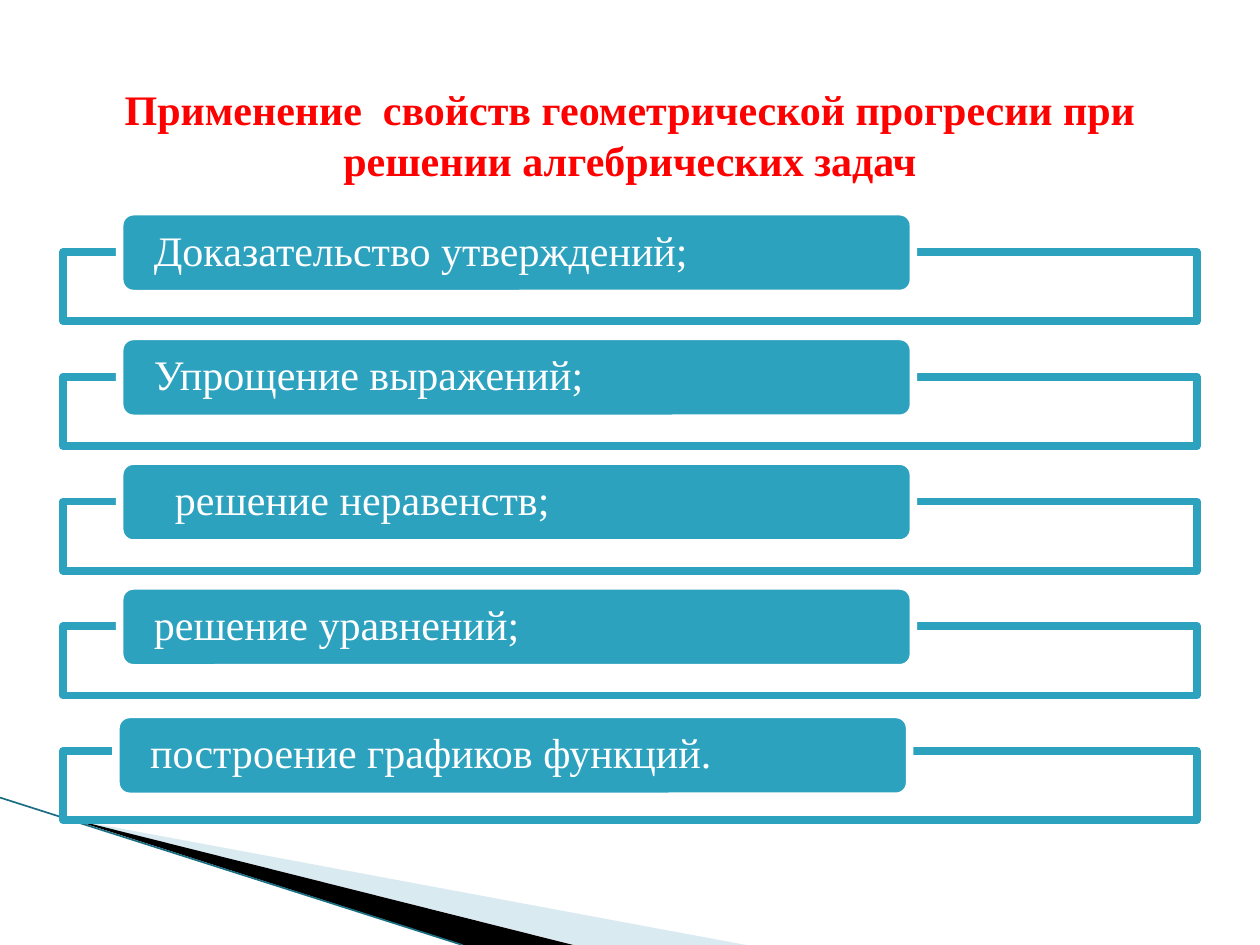
import pptx
import pptx.dml.color
import pptx.enum.shapes
import pptx.enum.text
import pptx.oxml.ns
import pptx.util
from lxml import etree

Inches = pptx.util.Inches
Pt = pptx.util.Pt
SHAPES = pptx.enum.shapes.MSO_SHAPE
ALIGN = pptx.enum.text.PP_ALIGN
MIDDLE = pptx.enum.text.MSO_ANCHOR.MIDDLE


def color(value):
    return pptx.dml.color.RGBColor.from_string(value)


def add_text(para, text, font="Times New Roman", size=24, fill="FFFFFF", bold=False):
    span = para.add_run()
    span.text = text
    span.font.name = font
    span.font.size = Pt(size)
    span.font.bold = bold
    span.font.color.rgb = color(fill)


class Page:
    """Holds the slide and its shared style."""

    accent = "2DA2BF"
    white = "FFFFFF"
    line_width = 4.33

    def __init__(self, deck):
        self.slide = deck.slides.add_slide(deck.slide_layouts[5])
        self.shapes = self.slide.shapes

    def paint(self, shape, fill, line=None, opacity=100):
        shape.shadow.inherit = False
        shape.fill.solid()
        shape.fill.fore_color.rgb = color(fill)
        if opacity < 100:
            solid = shape.fill._xPr.find(pptx.oxml.ns.qn("a:solidFill"))
            alpha = etree.SubElement(solid[0], pptx.oxml.ns.qn("a:alpha"))
            alpha.set("val", str(opacity * 1000))
        if line:
            shape.line.color.rgb = color(line)
            shape.line.width = Pt(self.line_width)
        else:
            shape.line.fill.background()

    def title(self, text, left, top, width, height):
        box = self.shapes.title
        box.left, box.top = Inches(left), Inches(top)
        box.width, box.height = Inches(width), Inches(height)
        box.text_frame.vertical_anchor = MIDDLE
        para = box.text_frame.paragraphs[0]
        para.alignment = ALIGN.CENTER
        add_text(para, text, fill="FF0000", bold=True)

    def wedge(self, points, fill, opacity=100):
        corners = [(Inches(x), Inches(y)) for x, y in points]
        builder = self.shapes.build_freeform(*corners[0])
        builder.add_line_segments(corners[1:], close=True)
        self.paint(builder.convert_to_shape(), fill, opacity=opacity)

    def line(self, start, end, stroke, width):
        connector = self.shapes.add_connector(
            pptx.enum.shapes.MSO_CONNECTOR.STRAIGHT,
            *(Inches(value) for value in start + end))
        connector.line.color.rgb = color(stroke)
        connector.line.width = Pt(width)
        etree.SubElement(connector._element.spPr, pptx.oxml.ns.qn("a:effectLst"))

    def frame(self, left, top, width, height):
        shape = self.shapes.add_shape(
            SHAPES.RECTANGLE, Inches(left), Inches(top), Inches(width), Inches(height))
        self.paint(shape, self.white, self.accent, opacity=90)

    def label(self, text, left, top, width, height):
        shape = self.shapes.add_shape(
            SHAPES.ROUNDED_RECTANGLE,
            Inches(left), Inches(top), Inches(width), Inches(height))
        self.paint(shape, self.accent, self.white)
        box = shape.text_frame
        box.word_wrap = True
        box.vertical_anchor = MIDDLE
        box.margin_left = box.margin_right = Inches(0.24)
        box.margin_top = box.margin_bottom = 0
        para = box.paragraphs[0]
        para.alignment = ALIGN.LEFT
        para.line_spacing = 0.9
        if text.startswith(" "):
            add_text(para, " ", font="Noto Sans Mono", size=20)
        add_text(para, text.lstrip())


def main():
    deck = pptx.Presentation()
    deck.slide_width, deck.slide_height = Inches(10), Inches(7.5)
    page = Page(deck)

    page.wedge([(0.55, 6.5), (5.92, 7.5), (4.56, 7.5)], "A0CBDC", opacity=40)
    page.wedge([(0.53, 6.49), (4.55, 7.5), (3.68, 7.5)], "000000")
    page.line((0, 6.33), (3.67, 7.5), "1B6D82", 0.95)

    # Each topic: text, label left, rise of the label above its frame
    topics = [
        ("Доказательство утверждений;", 0.95, 0.32),
        ("Упрощение выражений;", 0.95, 0.32),
        (" решение неравенств;", 0.95, 0.32),
        ("решение уравнений;", 0.95, 0.32),
        ("построение графиков функций.", 0.92, 0.29),
    ]
    for index, (text, left, rise) in enumerate(topics):
        top = 2 + 0.99 * index
        page.frame(0.5, top, 9, 0.55)
        page.label(text, left, top - rise, 6.3, 0.65)

    page.title("Применение  свойств геометрической прогресии при "
               "решении алгебрических задач", 0.5, 0.58, 9, 0.97)
    deck.save("out.pptx")


if __name__ == "__main__":
    main()
